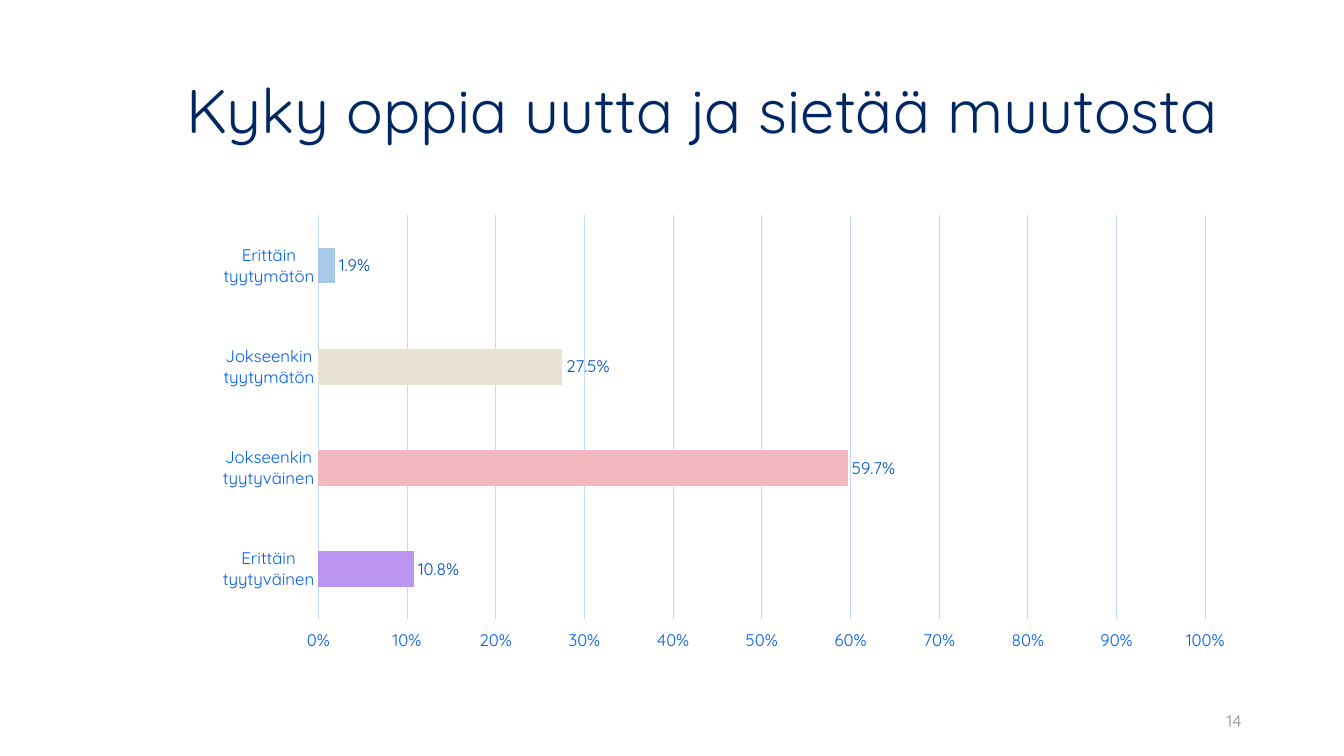
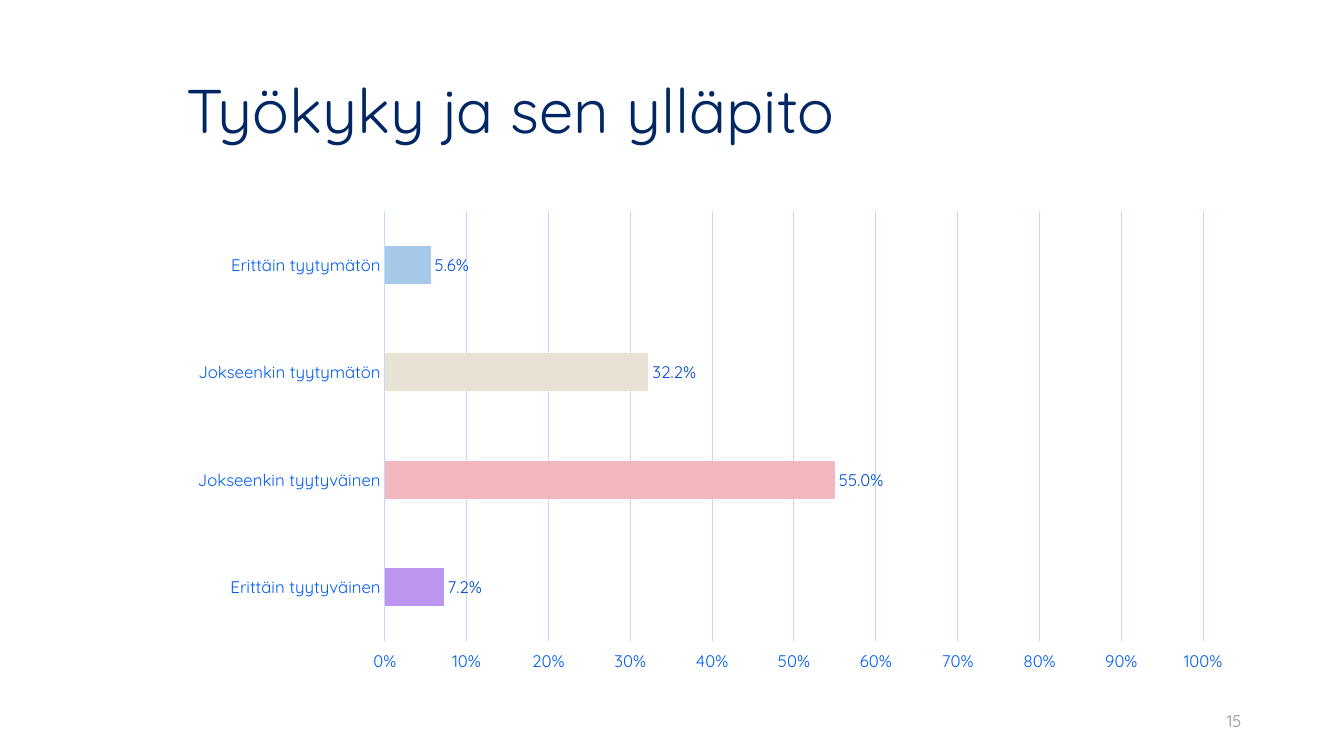
"""Builds two survey slides, each with a title, a bar chart and a page number."""
from dataclasses import dataclass
from typing import Optional

from pptx import Presentation
from pptx.chart.data import CategoryChartData
from pptx.dml.color import RGBColor
from pptx.enum.chart import XL_CHART_TYPE, XL_LABEL_POSITION, XL_TICK_LABEL_POSITION, XL_TICK_MARK
from pptx.enum.text import MSO_ANCHOR, PP_ALIGN
from pptx.oxml import parse_xml
from pptx.oxml.ns import nsdecls
from pptx.util import Pt

FONT = "Quicksand"
NAVY = "002663"
GREY = "8C8E9F"
AXIS_BLUE = "005DF3"
LABEL_BLUE = "004DCA"
GRID_BLUE = "C1D9FF"
BAR_COLOURS = ("A5C9E7", "E8E2D5", "F2B7BF", "BB95EF")
ANSWERS = (
    "Erittäin tyytymätön",
    "Jokseenkin tyytymätön",
    "Jokseenkin tyytyväinen",
    "Erittäin tyytyväinen",
)


@dataclass(frozen=True)
class Area:
    left: float
    top: float
    width: float
    height: float


@dataclass(frozen=True)
class Survey:
    title: str
    number: int
    shares: tuple[float, ...]
    plot_area: Optional[Area] = None


TITLE_AREA = Area(126, 28.8, 762.5, 104.4)
CHART_AREA = Area(126, 144, 762.5, 342.7)
NUMBER_AREA = Area(678, 500.4, 216, 28.8)
SURVEYS = (
    Survey("Kyky oppia uutta ja sietää muutosta", 14, (0.019, 0.275, 0.597, 0.108),
           Area(0.133, 0.028, 0.831, 0.843)),
    Survey("Työkyky ja sen ylläpito", 15, (0.056, 0.322, 0.55, 0.072)),
)


def colour(value: str) -> RGBColor:
    return RGBColor.from_string(value)


def style_font(font, size: float, value: str) -> None:
    font.name = FONT
    font.size = Pt(size)
    font.bold = False
    font.color.rgb = colour(value)


def style_line(line, value: str) -> None:
    line.color.rgb = colour(value)
    line.width = Pt(0.75)


def place(area: Area) -> tuple[Pt, Pt, Pt, Pt]:
    return Pt(area.left), Pt(area.top), Pt(area.width), Pt(area.height)


def add_text(page, area: Area, text: str, size: float, value: str,
             alignment: PP_ALIGN = PP_ALIGN.LEFT, spacing: float = 1.0) -> None:
    box = page.shapes.add_textbox(*place(area))
    frame = box.text_frame
    frame.word_wrap = True
    frame.vertical_anchor = MSO_ANCHOR.MIDDLE
    para = frame.paragraphs[0]
    para.alignment = alignment
    para.line_spacing = spacing
    span = para.add_run()
    span.text = text
    style_font(span.font, size, value)


def fix_plot_area(chart, area: Area) -> None:
    plot_area = chart.element.xpath("c:chart/c:plotArea")[0]
    for layout in plot_area.xpath("c:layout"):
        plot_area.remove(layout)
    plot_area.insert(0, parse_xml(
        f'<c:layout {nsdecls("c")}><c:manualLayout><c:layoutTarget val="inner"/>'
        f'<c:xMode val="edge"/><c:yMode val="edge"/>'
        f'<c:x val="{area.left}"/><c:y val="{area.top}"/>'
        f'<c:w val="{area.width}"/><c:h val="{area.height}"/>'
        f'</c:manualLayout></c:layout>'))


def style_axes(chart) -> None:
    answers, shares = chart.category_axis, chart.value_axis
    for axis in (answers, shares):
        axis.major_tick_mark = XL_TICK_MARK.NONE
        axis.minor_tick_mark = XL_TICK_MARK.NONE
        style_font(axis.tick_labels.font, 12, AXIS_BLUE)
    answers.reverse_order = True
    style_line(answers.format.line, GRID_BLUE)
    shares.minimum_scale = 0
    shares.maximum_scale = 1
    shares.major_unit = 0.1
    shares.tick_label_position = XL_TICK_LABEL_POSITION.HIGH
    shares.format.line.fill.background()
    shares.tick_labels.number_format = "0%"
    shares.tick_labels.number_format_is_linked = False
    shares.has_major_gridlines = True
    style_line(shares.major_gridlines.format.line, GRID_BLUE)


def style_bars(plot) -> None:
    plot.gap_width = 182
    plot.vary_by_categories = False
    for index, value in enumerate(BAR_COLOURS):
        bar = plot.series[0].points[index].format
        bar.fill.solid()
        bar.fill.fore_color.rgb = colour(value)
        bar.line.fill.background()
    plot.has_data_labels = True
    labels = plot.data_labels
    labels.show_value = True
    labels.number_format = "0.0%"
    labels.number_format_is_linked = False
    labels.position = XL_LABEL_POSITION.OUTSIDE_END
    style_font(labels.font, 12, LABEL_BLUE)


def add_bar_chart(page, survey: Survey) -> None:
    data = CategoryChartData(number_format="0.0%")
    data.categories = ANSWERS
    data.add_series("Series 1", survey.shares)
    chart = page.shapes.add_chart(
        XL_CHART_TYPE.BAR_CLUSTERED, *place(CHART_AREA), data).chart
    chart.has_title = False
    chart.has_legend = False
    style_font(chart.font, 10, NAVY)
    style_axes(chart)
    style_bars(chart.plots[0])
    if survey.plot_area:
        fix_plot_area(chart, survey.plot_area)


def add_survey_page(deck, survey: Survey) -> None:
    page = deck.slides.add_slide(deck.slide_layouts[6])
    add_text(page, TITLE_AREA, survey.title, 44, NAVY, spacing=0.9)
    add_text(page, NUMBER_AREA, str(survey.number), 12, GREY, PP_ALIGN.RIGHT)
    add_bar_chart(page, survey)


def main() -> None:
    deck = Presentation()
    deck.slide_width = Pt(960)
    deck.slide_height = Pt(540)
    for survey in SURVEYS:
        add_survey_page(deck, survey)
    deck.save("out.pptx")


if __name__ == "__main__":
    main()
